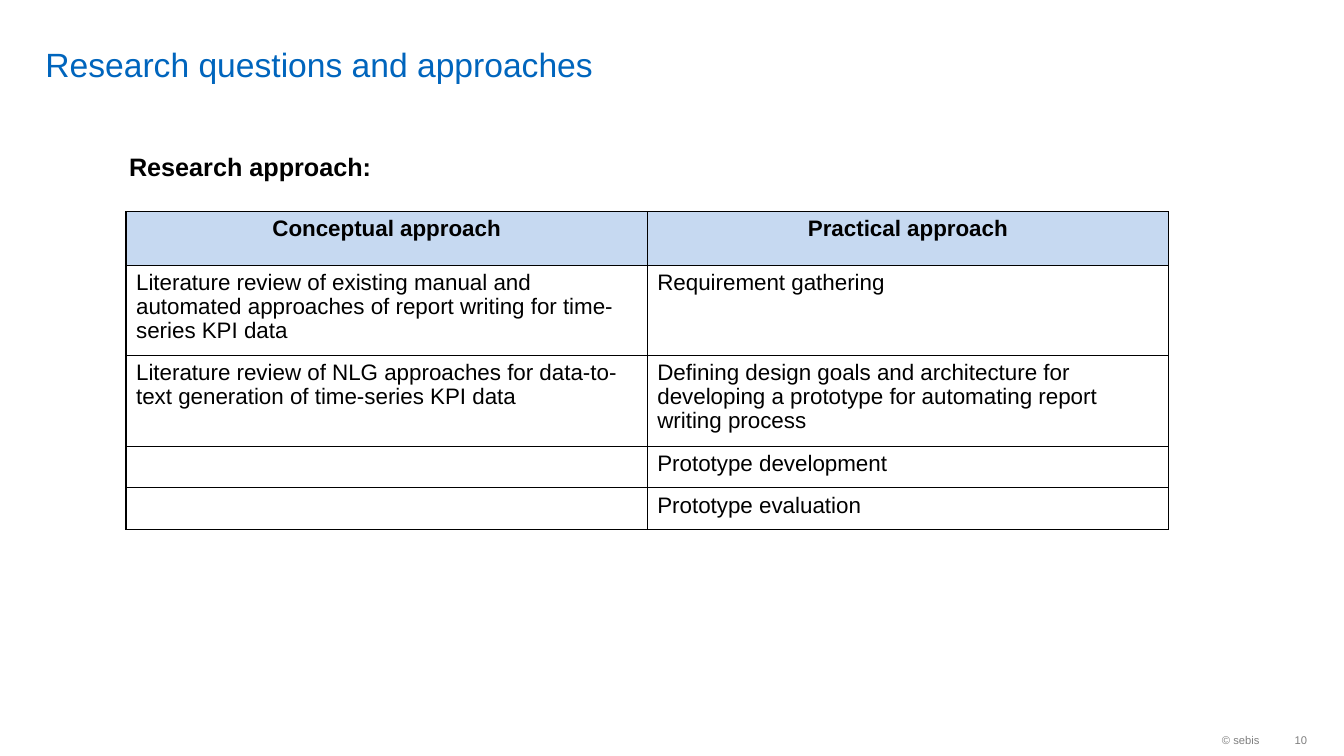
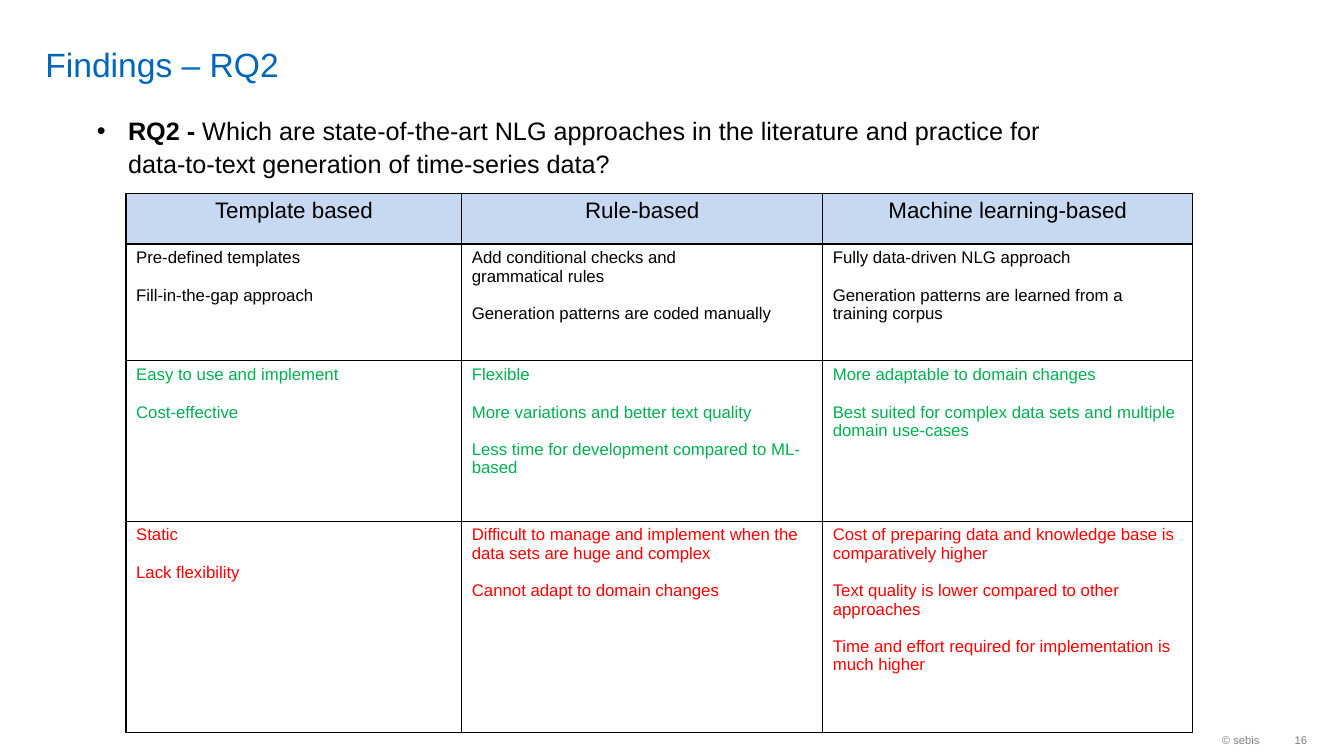
from dataclasses import dataclass

from lxml.etree import SubElement
from pptx import Presentation
from pptx.dml.color import RGBColor
from pptx.enum.text import MSO_ANCHOR, PP_ALIGN
from pptx.oxml.ns import qn
from pptx.slide import Slide
from pptx.util import Inches, Pt

BLUE = RGBColor(0x00, 0x65, 0xBD)
PALE = RGBColor(0xC6, 0xD9, 0xF1)
GRAY = RGBColor(0x7F, 0x7F, 0x7F)
BLACK = RGBColor(0x00, 0x00, 0x00)
GREEN = RGBColor(0x00, 0xB0, 0x50)
RED = RGBColor(0xFF, 0x00, 0x00)
FACE = "Arial"


@dataclass
class Row:
    height: float
    cells: list[list[str]]
    color: RGBColor = BLACK


@dataclass
class Grid:
    top: float
    widths: list[float]
    heads: list[str]
    head_height: float
    rows: list[Row]
    size: float
    bold: bool
    pad: float
    pitch: float


def style(para, size: float, color: RGBColor = BLACK, bold: bool = False) -> None:
    font = para.font
    font.name, font.size, font.bold = FACE, Pt(size), bold
    font.color.rgb = color


def clear(frame) -> None:
    frame.word_wrap = True
    frame.vertical_anchor = MSO_ANCHOR.TOP
    frame.margin_left = frame.margin_right = 0
    frame.margin_top = frame.margin_bottom = 0


def label(slide: Slide, text: str, left: float, top: float, width: float,
          height: float, size: float, color: RGBColor = BLACK,
          bold: bool = False) -> None:
    box = slide.shapes.add_textbox(
        Inches(left), Inches(top), Inches(width), Inches(height))
    clear(box.text_frame)
    para = box.text_frame.paragraphs[0]
    para.text = text
    style(para, size, color, bold)


def start(deck, title: str, number: int) -> Slide:
    slide = deck.slides.add_slide(deck.slide_layouts[5])
    head = slide.shapes.title
    head.left, head.top = Inches(0.45), Inches(0.44)
    head.width, head.height = Inches(12), Inches(0.43)
    clear(head.text_frame)
    para = head.text_frame.paragraphs[0]
    para.text = title
    para.alignment = PP_ALIGN.LEFT
    style(para, 24, BLUE)
    label(slide, "© sebis", 12.12, 7.27, 0.5, 0.15, 8, GRAY)
    label(slide, str(number), 12.84, 7.27, 0.25, 0.15, 8, GRAY)
    return slide


def border(cell) -> None:
    props = cell._tc.get_or_add_tcPr()
    for side in ("lnL", "lnR", "lnT", "lnB"):
        line = SubElement(props, qn(f"a:{side}"), w=str(Pt(1)))
        fill = SubElement(line, qn("a:solidFill"))
        SubElement(fill, qn("a:srgbClr"), val=str(BLACK))


def fill_cell(cell, texts: list[str], grid: Grid, row: Row) -> None:
    border(cell)
    cell.fill.background()
    cell.margin_top = Inches(grid.pad)
    frame = cell.text_frame
    for index, text in enumerate(texts):
        para = frame.add_paragraph() if index else frame.paragraphs[0]
        para.text = text
        para.line_spacing = grid.pitch
        if index:
            para.space_before = Pt(13.5)
        style(para, grid.size, row.color)


def fill_head(cell, text: str, bold: bool) -> None:
    border(cell)
    cell.fill.solid()
    cell.fill.fore_color.rgb = PALE
    para = cell.text_frame.paragraphs[0]
    para.text = text
    para.alignment = PP_ALIGN.CENTER
    style(para, 16, bold=bold)


def draw(slide: Slide, grid: Grid) -> None:
    heights = [grid.head_height] + [row.height for row in grid.rows]
    table = slide.shapes.add_table(
        len(heights), len(grid.widths), Inches(1.25), Inches(grid.top),
        Inches(sum(grid.widths)), Inches(sum(heights))).table
    table.horz_banding = False
    for column, width in zip(table.columns, grid.widths):
        column.width = Inches(width)
    for line, height in zip(table.rows, heights):
        line.height = Inches(height)
    for col, text in enumerate(grid.heads):
        fill_head(table.cell(0, col), text, grid.bold)
    for index, row in enumerate(grid.rows, 1):
        for col, texts in enumerate(row.cells):
            fill_cell(table.cell(index, col), texts, grid, row)


def question(slide: Slide, lead: str, text: str) -> None:
    box = slide.shapes.add_textbox(
        Inches(0.94), Inches(1.12), Inches(9.77), Inches(0.7))
    clear(box.text_frame)
    para = box.text_frame.paragraphs[0]
    para.line_spacing = 1.08
    props = para._p.get_or_add_pPr()
    props.set("marL", str(Inches(0.33)))
    props.set("indent", str(Inches(-0.31)))
    SubElement(props, qn("a:buFont"), typeface=FACE)
    SubElement(props, qn("a:buChar"), char="•")
    style(para, 18)
    first = para.add_run()
    first.text = lead
    first.font.bold = True
    para.add_run().text = text


APPROACH = Grid(
    2.1, [5.17, 5.17], ["Conceptual approach", "Practical approach"], 0.53,
    [
        Row(0.9, [
            ["Literature review of existing manual and automated approaches "
             "of report writing for time-series KPI data"],
            ["Requirement gathering"]]),
        Row(0.9, [
            ["Literature review of NLG approaches for data-to-text "
             "generation of time-series KPI data"],
            ["Defining design goals and architecture for developing a "
             "prototype for automating report writing process"]]),
        Row(0.41, [[""], ["Prototype development"]]),
        Row(0.41, [[""], ["Prototype evaluation"]]),
    ], 16, True, 0.06, 0.96)

FINDINGS = Grid(
    1.92, [3.33, 3.58, 3.67],
    ["Template based", "Rule-based", "Machine learning-based"], 0.5,
    [
        Row(1.16, [
            ["Pre-defined templates", "Fill-in-the-gap approach"],
            ["Add conditional checks and\vgrammatical rules",
             "Generation patterns are coded manually"],
            ["Fully data-driven NLG approach",
             "Generation patterns are learned from a training corpus"]]),
        Row(1.59, [
            ["Easy to use and implement", "Cost-effective"],
            ["Flexible", "More variations and better text quality",
             "Less time for development compared to ML-based"],
            ["More adaptable to domain changes",
             "Best suited for complex data sets and multiple domain "
             "use-cases"]], GREEN),
        Row(2.1, [
            ["Static", "Lack flexibility"],
            ["Difficult to manage and implement when the data sets are huge "
             "and complex", "Cannot adapt to domain changes"],
            ["Cost of preparing data and knowledge base is comparatively "
             "higher",
             "Text quality is lower compared to other approaches",
             "Time and effort required for implementation is much higher"]],
            RED),
    ], 12, False, 0.05, 0.98)


def main() -> None:
    deck = Presentation()
    deck.slide_width, deck.slide_height = Inches(13.33), Inches(7.5)

    slide = start(deck, "Research questions and approaches", 10)
    label(slide, "Research approach:", 1.28, 1.5, 5, 0.35, 18, bold=True)
    draw(slide, APPROACH)

    slide = start(deck, "Findings – RQ2", 16)
    question(slide, "RQ2 - ",
             "Which are state-of-the-art NLG approaches in the literature "
             "and practice for data-to-text generation of time-series data?")
    draw(slide, FINDINGS)

    deck.save("out.pptx")


if __name__ == "__main__":
    main()
